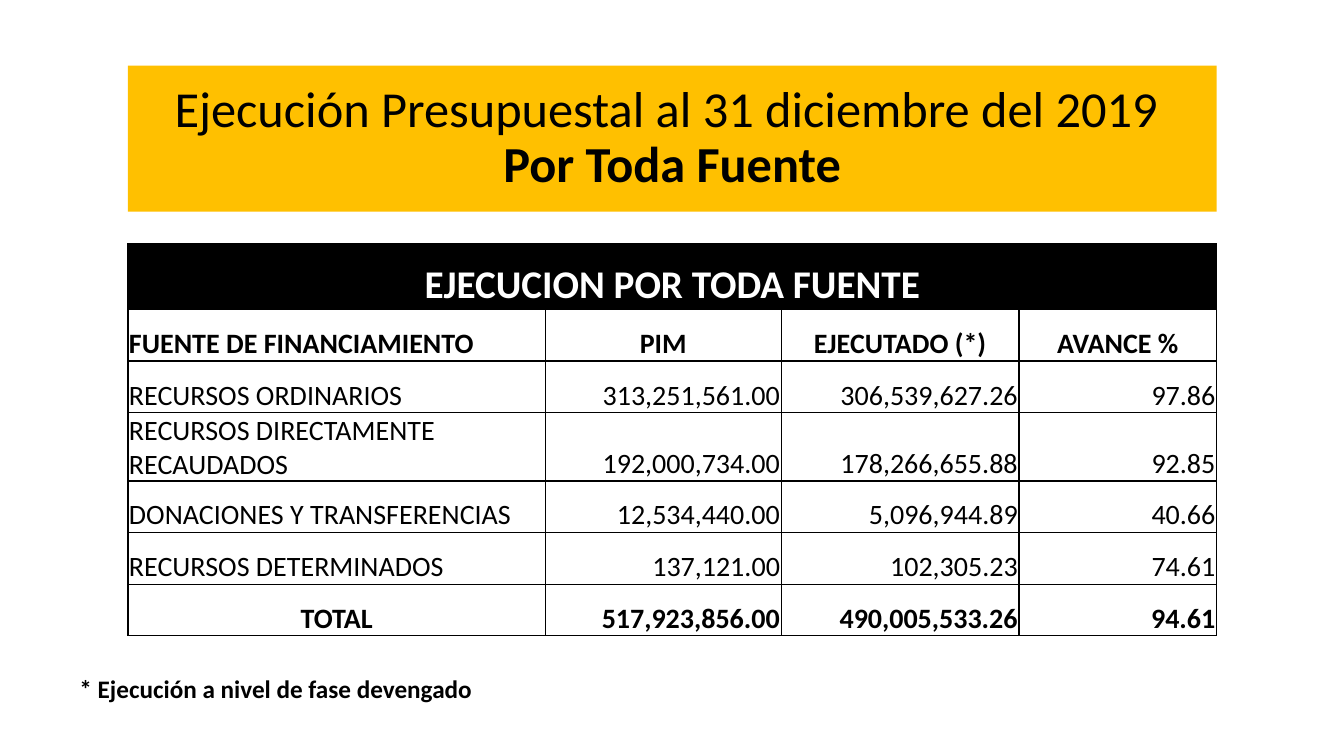
from dataclasses import dataclass

from lxml.etree import SubElement
from pptx import Presentation
from pptx.dml.color import RGBColor
from pptx.enum.text import MSO_ANCHOR, MSO_AUTO_SIZE, PP_ALIGN as Align
from pptx.oxml.ns import qn
from pptx.util import Pt

BLACK = RGBColor(0, 0, 0)
WHITE = RGBColor(255, 255, 255)
AMBER = RGBColor(255, 192, 0)
FONT = "Calibri"

LEFT, WIDTH = 91.4, 777.6
COL_WIDTHS = (298.1, 168.5, 169.9, 141.1)
BANNER_HEIGHT, ROW_HEIGHT = 46.8, 36.9


@dataclass
class RowStyle:
    label: Align
    values: Align
    size: float = 20
    bold: bool = False
    color: RGBColor = BLACK


BANNER = RowStyle(Align.CENTER, Align.CENTER, 28, True, WHITE)
HEADER = RowStyle(Align.LEFT, Align.CENTER, bold=True)
SOURCE = RowStyle(Align.LEFT, Align.RIGHT)
TOTAL = RowStyle(Align.CENTER, Align.RIGHT, bold=True)

ROWS = (
    (BANNER, ("EJECUCION POR TODA FUENTE", "", "", "")),
    (HEADER, ("FUENTE DE FINANCIAMIENTO", "PIM", "EJECUTADO (*)", "AVANCE %")),
    (SOURCE, ("RECURSOS ORDINARIOS", "313,251,561.00", "306,539,627.26", "97.86")),
    (SOURCE, ("RECURSOS DIRECTAMENTE RECAUDADOS", "192,000,734.00", "178,266,655.88", "92.85")),
    (SOURCE, ("DONACIONES Y TRANSFERENCIAS", "12,534,440.00", "5,096,944.89", "40.66")),
    (SOURCE, ("RECURSOS DETERMINADOS", "137,121.00", "102,305.23", "74.61")),
    (TOTAL, ("TOTAL", "517,923,856.00", "490,005,533.26", "94.61")),
)


def set_all(obj, values: dict) -> None:
    for name, value in values.items():
        setattr(obj, name, value)


def add_run(p, text: str, size: float, bold: bool, color: RGBColor = BLACK) -> None:
    r = p.add_run()
    r.text = text
    set_all(r.font, {"name": FONT, "size": Pt(size), "bold": bold})
    r.font.color.rgb = color


def add_borders(cell) -> None:
    tc_pr = cell._tc.get_or_add_tcPr()
    for side in ("a:lnL", "a:lnR", "a:lnT", "a:lnB"):
        ln = SubElement(tc_pr, qn(side), w=str(Pt(1)))
        fill = SubElement(ln, qn("a:solidFill"))
        SubElement(fill, qn("a:srgbClr"), val=str(BLACK))


def add_title(s) -> None:
    sp = s.shapes.title
    set_all(sp, {"left": Pt(LEFT), "top": Pt(46.8), "width": Pt(WIDTH), "height": Pt(104.4)})
    sp.fill.solid()
    sp.fill.fore_color.rgb = AMBER
    tf = sp.text_frame
    set_all(tf, {"word_wrap": True, "auto_size": MSO_AUTO_SIZE.NONE,
                 "vertical_anchor": MSO_ANCHOR.MIDDLE})
    p = tf.paragraphs[0]
    set_all(p, {"alignment": Align.CENTER, "line_spacing": 0.9})
    add_run(p, "Ejecución Presupuestal al 31 diciembre del 2019 ", 36, False)
    p.add_line_break()
    add_run(p, "Por Toda Fuente", 36, True)


def fill_cell(cell, text: str, style: RowStyle, align: Align) -> None:
    set_all(cell, {"vertical_anchor": MSO_ANCHOR.BOTTOM, "margin_left": Pt(0.75),
                   "margin_right": Pt(0.75), "margin_top": Pt(0.75), "margin_bottom": 0})
    add_borders(cell)
    if style is BANNER:
        cell.fill.solid()
        cell.fill.fore_color.rgb = BLACK
    else:
        cell.fill.background()
    if text:
        p = cell.text_frame.paragraphs[0]
        p.alignment = align
        add_run(p, text, style.size, style.bold, style.color)


def add_budget_table(s) -> None:
    height = BANNER_HEIGHT + ROW_HEIGHT * (len(ROWS) - 1)
    table = s.shapes.add_table(len(ROWS), len(COL_WIDTHS), Pt(LEFT), Pt(174.2),
                               Pt(WIDTH), Pt(height)).table
    set_all(table, {"first_row": False, "horz_banding": False})
    for column, width in zip(table.columns, COL_WIDTHS):
        column.width = Pt(width)
    for i, (style, texts) in enumerate(ROWS):
        table.rows[i].height = Pt(BANNER_HEIGHT if style is BANNER else ROW_HEIGHT)
        for j, text in enumerate(texts):
            fill_cell(table.cell(i, j), text, style, style.values if j else style.label)
    table.cell(0, 0).merge(table.cell(0, len(COL_WIDTHS) - 1))


def add_footnote(s) -> None:
    tf = s.shapes.add_textbox(Pt(49.7), Pt(477.4), Pt(301.7), Pt(28.8)).text_frame
    set_all(tf, {"word_wrap": False, "auto_size": MSO_AUTO_SIZE.SHAPE_TO_FIT_TEXT})
    add_run(tf.paragraphs[0], "* Ejecución a nivel de fase devengado", 18, True)


def main() -> None:
    prs = Presentation()
    set_all(prs, {"slide_width": Pt(960), "slide_height": Pt(540)})
    s = prs.slides.add_slide(prs.slide_layouts[5])
    add_title(s)
    add_footnote(s)
    add_budget_table(s)
    prs.save("out.pptx")


if __name__ == "__main__":
    main()
